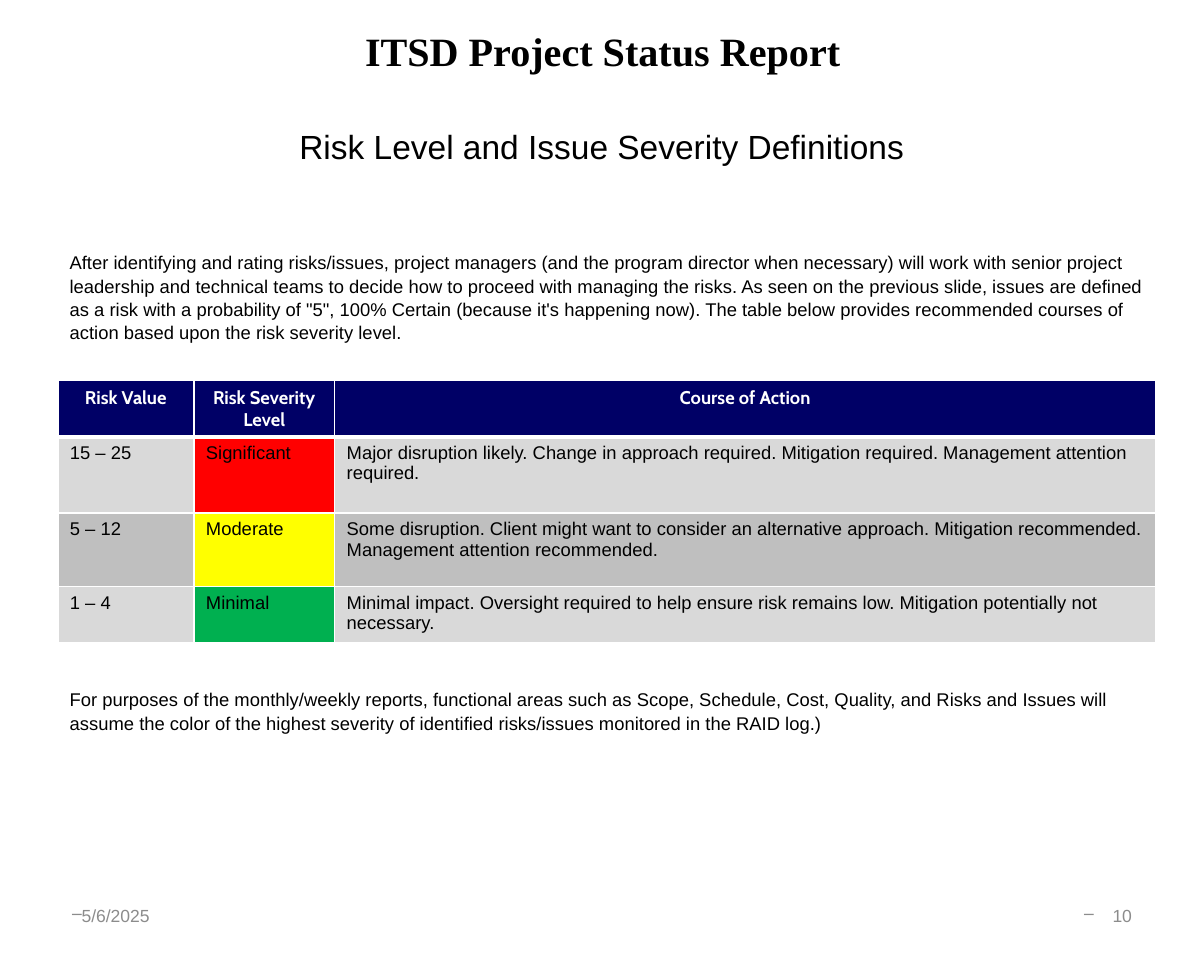
"""Build the risk level and issue severity definitions slide."""
from lxml import etree
from pptx import Presentation, util as u
from pptx.dml.color import RGBColor
from pptx.enum import text
from pptx.oxml import parse_xml
from pptx.oxml.ns import qn

DRAWING = "http://schemas.openxmlformats.org/drawingml/2006/main"
ALIGN = text.PP_ALIGN
ANCHOR = text.MSO_ANCHOR


def style(paragraph, size, color="000000", font="Arial", bold=False, align=ALIGN.LEFT):
    paragraph.alignment = align
    for run in paragraph.runs:
        run.font.size = u.Pt(size)
        run.font.name = font
        run.font.bold = bold
        run.font.color.rgb = RGBColor.from_string(color)


def add_text(left, top, width, height, content):
    box = slide.shapes.add_textbox(u.Cm(left), u.Cm(top), u.Cm(width), u.Cm(height))
    box.text_frame.word_wrap = True
    box.text_frame.text = content
    return box.text_frame


deck = Presentation()
deck.slide_width, deck.slide_height = u.Cm(25.4), u.Cm(20.32)
slide = deck.slides.add_slide(deck.slide_layouts[5])

report = add_text(3.61, 0.43, 18.21, 1.3, "ITSD Project Status Report")
style(report.paragraphs[0], 24, font="Times New Roman", bold=True, align=ALIGN.CENTER)

heading = slide.shapes.title
heading.left, heading.top = u.Cm(1.27), u.Cm(2.54)
heading.width, heading.height = u.Cm(22.86), u.Cm(1.07)
heading.text_frame.text = "Risk Level and Issue Severity Definitions"
heading.text_frame.vertical_anchor = ANCHOR.MIDDLE
style(heading.text_frame.paragraphs[0], 20, align=ALIGN.CENTER)

explanations = [
    (5.16, 23.5, 2.13,
     "After identifying and rating risks/issues, project managers (and the program director "
     "when necessary) will work with senior project leadership and technical teams to decide "
     "how to proceed with managing the risks. As seen on the previous slide, issues are defined "
     "as a risk with a probability of \"5\", 100% Certain (because it's happening now). The table "
     "below provides recommended courses of action based upon the risk severity level."),
    (14.38, 23.16, 1.19,
     "For purposes of the monthly/weekly reports, functional areas such as Scope, Schedule, "
     "Cost, Quality, and Risks and Issues will assume the color of the highest severity of "
     "identified risks/issues monitored in the RAID log.)"),
]
for top, width, height, content in explanations:
    explanation = add_text(1.22, top, width, height, content).paragraphs[0]
    explanation.line_spacing = 1.05
    style(explanation, 11)

severity_rows = [
    ("Risk Value", "Risk Severity\nLevel", "Course of Action"),
    ("15 – 25", "Significant",
     "Major disruption likely. Change in approach required. Mitigation required. "
     "Management attention required."),
    ("5 – 12", "Moderate",
     "Some disruption. Client might want to consider an alternative approach. "
     "Mitigation recommended. Management attention recommended."),
    ("1 – 4", "Minimal",
     "Minimal impact. Oversight required to help ensure risk remains low. "
     "Mitigation potentially not necessary."),
]
row_fills = ["000066", "D9D9D9", "BFBFBF", "D9D9D9"]
severity_fills = ["000066", "FF0000", "FFFF00", "00B050"]
row_heights = [1.17, 1.61, 1.55, 1.19]
column_widths = [2.87, 2.97, 17.32]

severity = slide.shapes.add_table(
    4, 3, u.Cm(1.22), u.Cm(8.03), u.Cm(sum(column_widths)), u.Cm(sum(row_heights))).table
for column, width in zip(severity.columns, column_widths):
    column.width = u.Cm(width)
for r, entries in enumerate(severity_rows):
    severity.rows[r].height = u.Cm(row_heights[r])
    header = r == 0
    for c, entry in enumerate(entries):
        cell = severity.cell(r, c)
        cell.text_frame.text = entry
        for paragraph in cell.text_frame.paragraphs:
            if header:
                style(paragraph, 11, "FFFFFF", "Cabin", True, ALIGN.CENTER)
            else:
                style(paragraph, 11)
        borders = cell._tc.get_or_add_tcPr()
        for side in "LRTB":
            thick = (header and side == "B") or (r == 1 and side == "T")
            borders.append(parse_xml(
                f'<a:ln{side} xmlns:a="{DRAWING}" w="{u.Pt(3 if thick else 1)}"><a:solidFill>'
                f'<a:srgbClr val="FFFFFF"/></a:solidFill></a:ln{side}>'))
        cell.fill.solid()
        fill = severity_fills[r] if c == 1 else row_fills[r]
        cell.fill.fore_color.rgb = RGBColor.from_string(fill)

footers = [
    (1.27, "5/6/2025", ALIGN.LEFT, 0),
    (18.21, "10", ALIGN.RIGHT, 0.6),
]
for left, content, align, hanging in footers:
    footer = add_text(left, 18.82, 5.92, 1.09, content)
    footer.vertical_anchor = ANCHOR.MIDDLE
    line = footer.paragraphs[0]
    properties = line._p.get_or_add_pPr()
    properties.set("marL", str(u.Cm(hanging)))
    properties.set("indent", str(-u.Cm(hanging)))
    etree.SubElement(properties, qn("a:buChar")).set("char", "–")
    line.line_spacing = 0.8
    style(line, 10.5, "8C8C8C", align=align)

deck.save("out.pptx")
